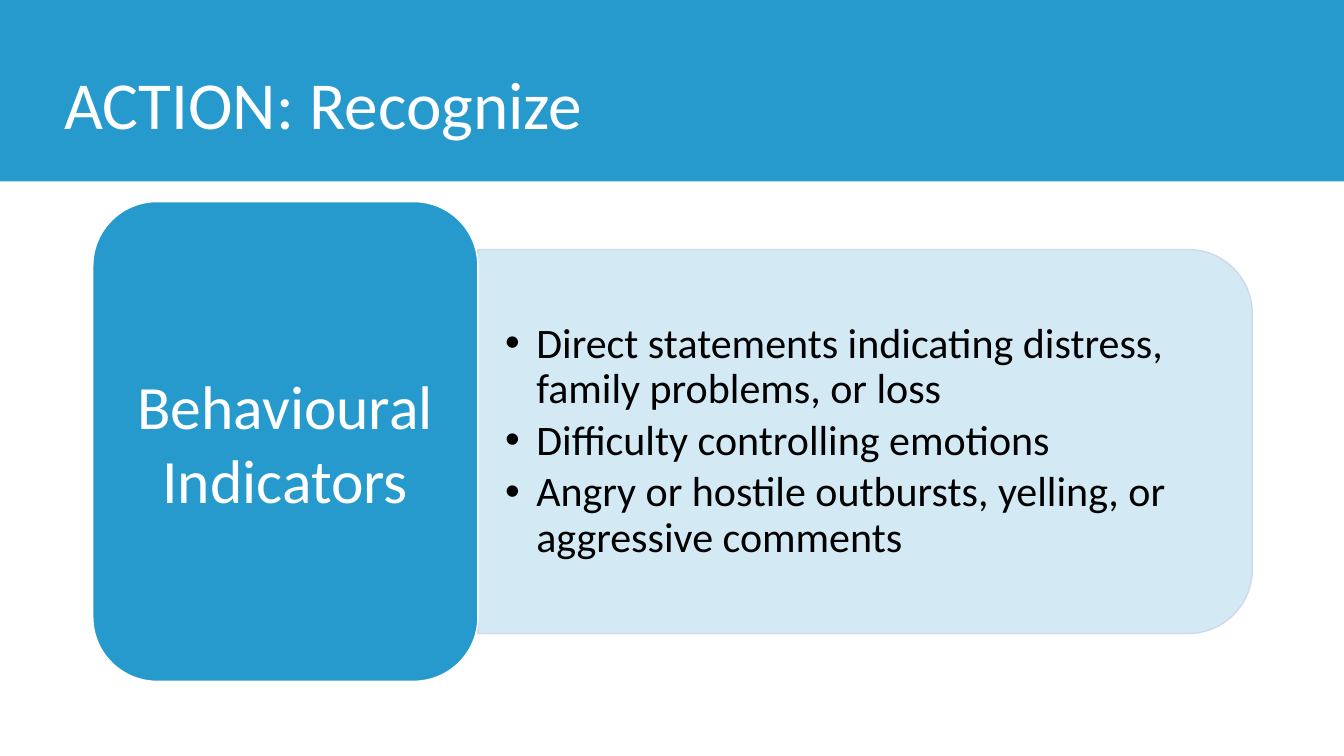
from lxml import etree
from pptx import Presentation
from pptx.dml.color import RGBColor
from pptx.enum.shapes import MSO_SHAPE
from pptx.enum.text import MSO_ANCHOR, PP_ALIGN
from pptx.oxml.ns import qn
from pptx.util import Inches, Pt

TITLE = "ACTION: Recognize"
LABEL = ["Behavioural", "Indicators"]
INDICATORS = [
    "Direct statements indicating distress, family problems, or loss",
    "Difficulty controlling emotions",
    "Angry or hostile outbursts, yelling, or aggressive comments",
]

BLUE = RGBColor(0x27, 0x9A, 0xCD)
PALE_LINE = RGBColor(0xCF, 0xD5, 0xEA)
WHITE = RGBColor(0xFF, 0xFF, 0xFF)
BLACK = RGBColor(0, 0, 0)
FONT = "Calibri"
RECTANGLE = MSO_SHAPE.RECTANGLE
ROUNDED = MSO_SHAPE.ROUNDED_RECTANGLE
ROUNDED_TOP = MSO_SHAPE.ROUND_2_SAME_RECTANGLE
MIDDLE = MSO_ANCHOR.MIDDLE
LEFT, CENTER = PP_ALIGN.LEFT, PP_ALIGN.CENTER

SLIDE_WIDTH, SLIDE_HEIGHT = 13.33, 7.5
BANNER_HEIGHT = 1.8
LABEL_BOX = (0.92, 2, 3.82, 4.76)
PANEL_WIDTH, PANEL_HEIGHT = 7.68, 3.81
BULLET_INDENT = 0.31


def set_alpha(color_format, percent):
    """Set the opacity of a solid fill or line."""
    solid = color_format._xPr.find(qn("a:solidFill"))
    etree.SubElement(solid[0], qn("a:alpha"), val=str(percent * 1000))


def add_block(slide, kind, box, fill, line=None):
    shape = slide.shapes.add_shape(kind, *map(Inches, box))
    shape.shadow.inherit = False
    shape.fill.solid()
    shape.fill.fore_color.rgb = fill
    if line is None:
        shape.line.fill.background()
    else:
        shape.line.color.rgb = line
        shape.line.width = Pt(1)
    return shape


def add_bullet(paragraph):
    properties = paragraph._p.get_or_add_pPr()
    properties.set("marL", str(Inches(BULLET_INDENT)))
    properties.set("indent", str(-Inches(BULLET_INDENT)))
    etree.SubElement(properties, qn("a:buFont"), typeface="Arial")
    etree.SubElement(properties, qn("a:buChar"), char="•")


def write_text(shape, lines, size, color, insets=(0.1, 0.05), align=LEFT,
               spacing=1.0, after=0, bullets=False):
    frame = shape.text_frame
    frame.word_wrap = True
    frame.vertical_anchor = MIDDLE
    frame.margin_left = frame.margin_right = Inches(insets[0])
    frame.margin_top = frame.margin_bottom = Inches(insets[1])
    for index, line in enumerate(lines):
        paragraph = frame.add_paragraph() if index else frame.paragraphs[0]
        paragraph.text = line
        if bullets:
            add_bullet(paragraph)
        paragraph.alignment = align
        paragraph.line_spacing = spacing
        paragraph.space_after = Pt(after)
        paragraph.font.name = FONT
        paragraph.font.size = Pt(size)
        paragraph.font.color.rgb = color


def add_text(slide, box, lines, **text_format):
    write_text(slide.shapes.add_textbox(*map(Inches, box)), lines, **text_format)


def main():
    presentation = Presentation()
    presentation.slide_width = Inches(SLIDE_WIDTH)
    presentation.slide_height = Inches(SLIDE_HEIGHT)
    slide = presentation.slides.add_slide(presentation.slide_layouts[6])

    add_block(slide, RECTANGLE, (0, 0, SLIDE_WIDTH, BANNER_HEIGHT), BLUE)
    add_text(slide, (0.54, 0.37, 11.8, 1.4), [TITLE], size=48, color=WHITE, spacing=0.9)

    # The panel is an upright shape turned a quarter, beside the label's middle.
    left, top, width, height = LABEL_BOX
    panel_left = left + width
    center_x, center_y = panel_left + PANEL_WIDTH / 2, top + height / 2
    upright = (center_x - PANEL_HEIGHT / 2, center_y - PANEL_WIDTH / 2,
               PANEL_HEIGHT, PANEL_WIDTH)
    panel = add_block(slide, ROUNDED_TOP, upright, BLUE, PALE_LINE)
    panel.rotation = 90
    set_alpha(panel.fill, 20)
    set_alpha(panel.line.fill, 90)
    add_text(slide, (panel_left, center_y - 1.72, 7.5, 3.44), INDICATORS, size=30,
             color=BLACK, insets=(0.27, 0.14), spacing=0.9, after=4.5, bullets=True)

    label = add_block(slide, ROUNDED, LABEL_BOX, BLUE, WHITE)
    write_text(label, LABEL, size=44, color=WHITE, insets=(0.18, 0.09), align=CENTER)

    presentation.save("out.pptx")


if __name__ == "__main__":
    main()
